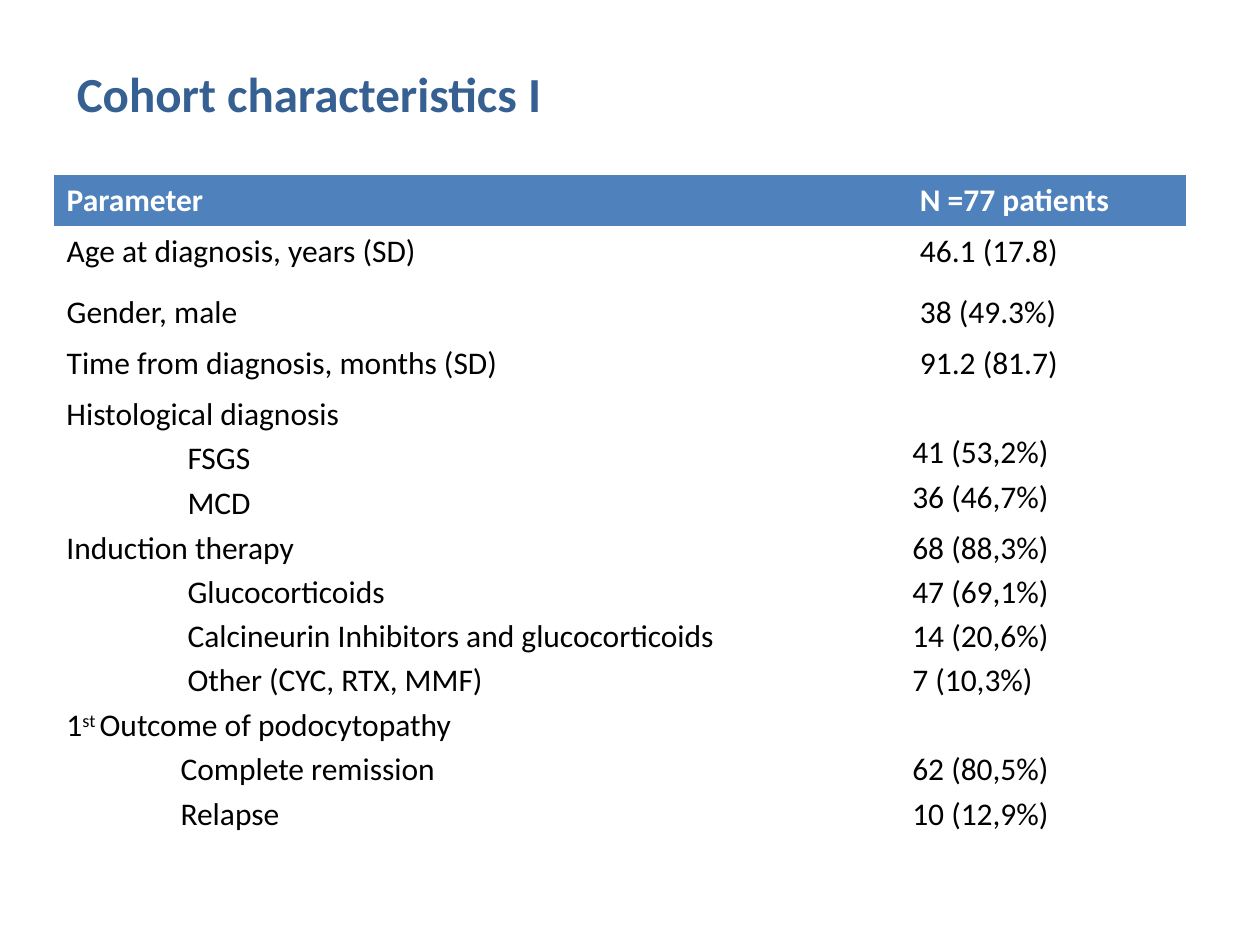
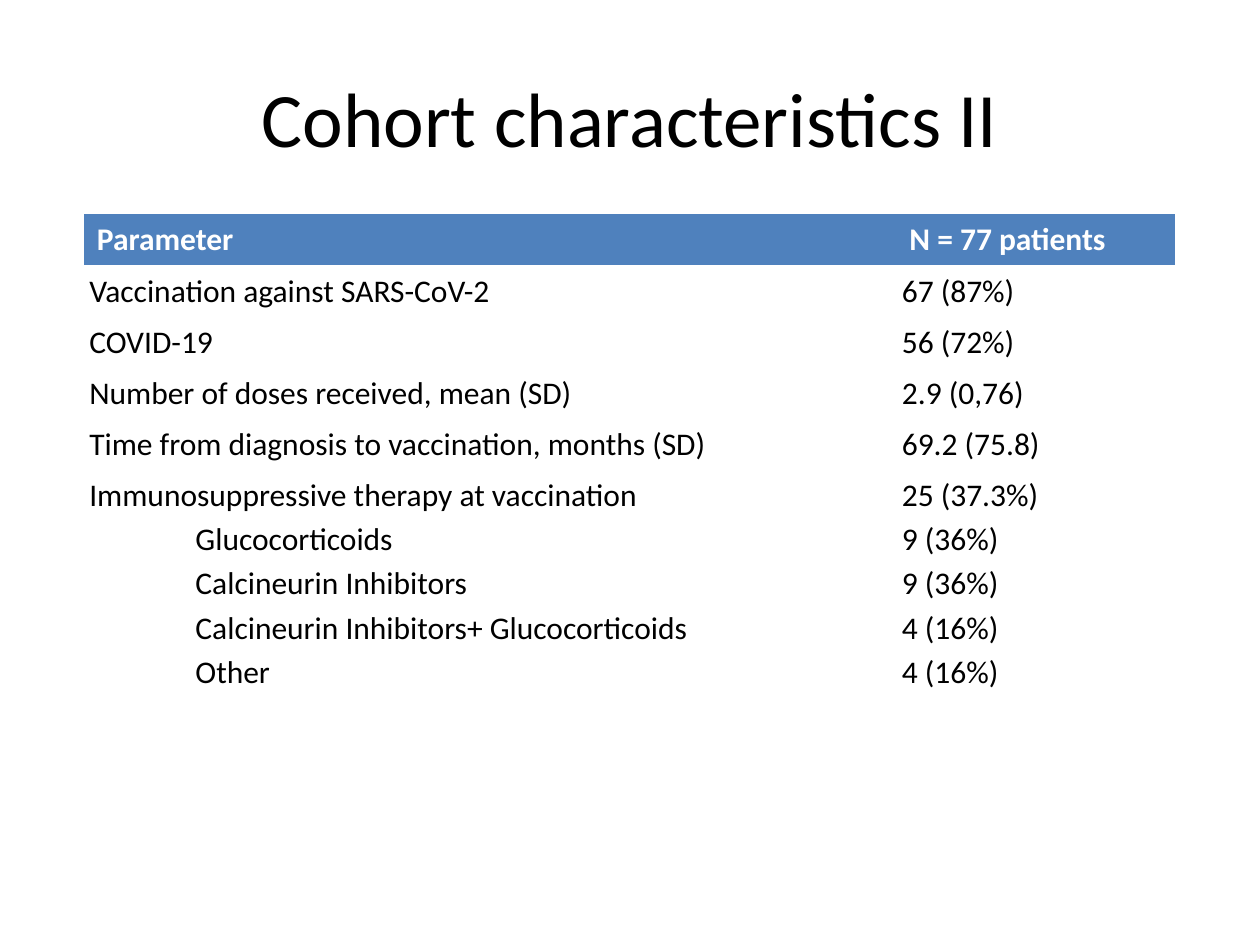
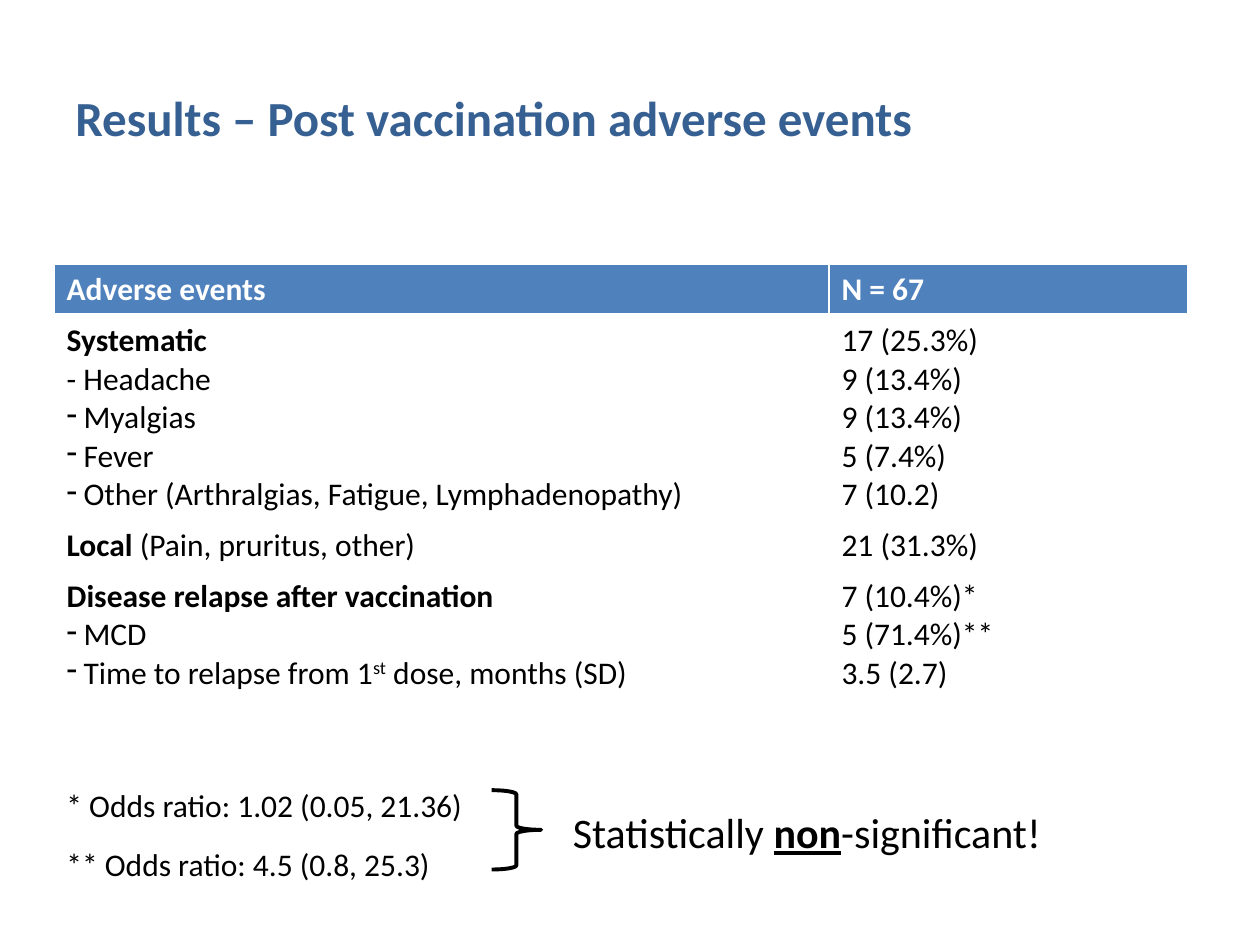
import pptx
import pptx.dml.color
import pptx.enum.shapes
import pptx.enum.text
import pptx.oxml
import pptx.oxml.ns
import pptx.util
from dataclasses import dataclass, field
from typing import Any

Cm = pptx.util.Cm
Pt = pptx.util.Pt

# Shared look
FONT = "Calibri"
BLACK, WHITE, BLUE, NAVY = "000000", "FFFFFF", "4F81BD", "376092"
PLAIN = "{2D5ABB26-0587-4C30-8999-92F81FD0307C}"  # table style without grid
WIDE, SLIM = 0.25, 0.1  # side margins of cells
ROW = 1.03
LEFT = pptx.enum.text.PP_ALIGN.LEFT
MID = pptx.enum.text.PP_ALIGN.CENTER


@dataclass
class Run:
    text: str
    bold: bool = False
    line: bool = False
    high: bool = False


@dataclass
class Line:
    runs: list[Run]
    inset: float = 0
    dash: bool = False


@dataclass
class Row:
    names: list[Any]
    vals: list[str]
    high: float = ROW
    snug: bool = False
    skip: float = 0  # space above the first value


@dataclass
class Grid:
    left: float
    top: float
    cols: tuple[float, float]
    head: tuple[str, str]
    rows: list[Row] = field(default_factory=list)
    edge: float = WIDE  # left margin of names in snug rows
    fill: str | None = WHITE
    rule: bool = False


def tint(code: str) -> pptx.dml.color.RGBColor:
    return pptx.dml.color.RGBColor.from_string(code)


def write(frame: Any, lines: list[Any], *, size: float = 18, color: str = BLACK,
          bold: bool = False, align: Any = LEFT, space: float | None = None) -> None:
    """Fill a text frame; plain strings become lines of one run."""
    frame.word_wrap = True
    for i, item in enumerate(lines):
        line = item if isinstance(item, Line) else Line([Run(item)])
        para = frame.paragraphs[0] if i == 0 else frame.add_paragraph()
        para.alignment = align
        if space:
            para.line_spacing = space
        if line.inset:
            props = para._p.get_or_add_pPr()
            props.set("marL", str(Cm(line.inset)))
            props.set("indent", str(-Cm(line.inset) if line.dash else 0))
            if line.dash:
                mark = pptx.oxml.parse_xml(
                    f'<a:buChar {pptx.oxml.ns.nsdecls("a")} char="-"/>')
                props.append(mark)
        for part in line.runs:
            run = para.add_run()
            run.text = part.text
            font = run.font
            font.name, font.size = FONT, Pt(size)
            font.bold = bold or part.bold
            font.color.rgb = tint(color)
            if part.line:
                font.underline = True
            if part.high:
                run._r.get_or_add_rPr().set("baseline", "30000")


def label(slide: Any, left: float, top: float, width: float, height: float,
          lines: list[Any], **style: Any) -> Any:
    box = slide.shapes.add_textbox(Cm(left), Cm(top), Cm(width), Cm(height))
    write(box.text_frame, lines, **style)
    return box


def title(slide: Any, text: str, left: float = 1.27, top: float = 0.76,
          height: float = 3.18, **style: Any) -> None:
    look = dict(size=28, color=NAVY, bold=True) | style
    box = label(slide, left, top, 22.86, height, [text], **look)
    box.text_frame.vertical_anchor = pptx.enum.text.MSO_ANCHOR.MIDDLE


def border(cell: Any, sides: dict[str, float]) -> None:
    """Draw white borders; sides are given in schema order."""
    props = cell._tc.get_or_add_tcPr()
    for i, (side, width) in enumerate(sides.items()):
        props.insert(i, pptx.oxml.parse_xml(
            f'<a:{side} {pptx.oxml.ns.nsdecls("a")} w="{Pt(width)}"><a:solidFill>'
            f'<a:srgbClr val="{WHITE}"/></a:solidFill></a:{side}>'))


def paint(cell: Any, color: str | None) -> None:
    if color is None:
        cell.fill.background()
    else:
        cell.fill.solid()
        cell.fill.fore_color.rgb = tint(color)


def draw(slide: Any, grid: Grid) -> None:
    highs = [ROW] + [row.high for row in grid.rows]
    frame = slide.shapes.add_table(len(highs), 2, Cm(grid.left), Cm(grid.top),
                                   Cm(sum(grid.cols)), Cm(sum(highs)))
    table = frame.table
    table.horz_banding = False
    table._tbl.tblPr.find(pptx.oxml.ns.qn("a:tableStyleId")).text = PLAIN
    for col, width in zip(table.columns, grid.cols):
        col.width = Cm(width)
    for row, high in zip(table.rows, highs):
        row.height = Cm(high)
    # Header row
    for i, text in enumerate(grid.head):
        cell = table.cell(0, i)
        write(cell.text_frame, [text], color=WHITE, bold=True)
        paint(cell, BLUE)
        if grid.rule:
            border(cell, {"lnL": 1, "lnR": 1, "lnT": 1, "lnB": 3})
    # Body rows
    for r, row in enumerate(grid.rows, 1):
        for i, lines in enumerate((row.names, row.vals)):
            cell = table.cell(r, i)
            if row.snug:
                cell.margin_left = Cm(SLIM if i else grid.edge)
                cell.margin_right = Cm(SLIM)
                cell.margin_top = Cm(0.02 + (row.skip if i else 0))
                cell.margin_bottom = 0
            write(cell.text_frame, lines, space=1.15 if row.snug else None)
            paint(cell, grid.fill)


def under(inset: float, *texts: str) -> list[Line]:
    return [Line([Run(text)], inset) for text in texts]


def dashed(*runs: Run) -> Line:
    return Line(list(runs), 0.34, True)


def strong(text: str, rest: str = "") -> Line:
    return Line([Run(text, bold=True)] + ([Run(rest)] if rest else []))


def first(slide: Any) -> None:
    title(slide, "Cohort characteristics I", left=1.3, top=0, height=3.73)
    draw(slide, Grid(1.09, 3.53, (17.2, 5.61), ("Parameter", "N =77 patients"), [
        Row(["Age at diagnosis, years (SD)"], ["46.1 (17.8)"], 1.22),
        Row(["Gender, male"], ["38 (49.3%)"]),
        Row(["Time from diagnosis, months (SD)"], ["91.2 (81.7)"]),
        Row(["Histological diagnosis", *under(2.44, "FSGS", "MCD")],
            ["41 (53,2%)", "36 (46,7%)"], 2.69, True, 0.77),
        Row(["Induction therapy",
             *under(2.44, "Glucocorticoids",
                    "Calcineurin Inhibitors and glucocorticoids",
                    "Other (CYC, RTX, MMF)")],
            ["68 (88,3%)", "47 (69,1%)", "14 (20,6%)", "7 (10,3%)"], 3.58, True),
        Row([Line([Run("1"), Run("st ", high=True), Run("Outcome of podocytopathy")]),
             *under(2.3, "Complete remission", "Relapse")],
            ["62 (80,5%)", "10 (12,9%)"], 2.69, True, 0.89),
    ], fill=None))


def second(slide: Any) -> None:
    title(slide, "Cohort characteristics II", size=44, color=BLACK, bold=False,
          align=MID)
    pairs = [("Vaccination against SARS-CoV-2", "67 (87%)"),
             ("COVID-19", "56 (72%)"),
             ("Number of doses received, mean (SD)", "2.9 (0,76)"),
             ("Time from diagnosis to vaccination, months (SD)", "69.2 (75.8)")]
    rows = [Row([name], [val], snug=True) for name, val in pairs]
    rows.append(Row(
        ["Immunosuppressive therapy at vaccination",
         *under(2.14, "Glucocorticoids", "Calcineurin Inhibitors",
                "Calcineurin Inhibitors+ Glucocorticoids", "Other")],
        ["25 (37.3%)", "9 (36%)", "9 (36%)", "4 (16%)", "4 (16%)"], 4.49, True))
    draw(slide, Grid(1.7, 4.32, (16.38, 5.61), ("Parameter", "N = 77 patients"),
                     rows, edge=SLIM))


def third(slide: Any) -> None:
    title(slide, "Results – Post vaccination adverse events")
    draw(slide, Grid(1.09, 5.33, (15.62, 7.24), ("Adverse events", "N = 67"), [
        Row([strong("Systematic"), "- Headache", dashed(Run("Myalgias")),
             dashed(Run("Fever")),
             dashed(Run("Other (Arthralgias, Fatigue, Lymphadenopathy)"))],
            ["17 (25.3%)", "9 (13.4%)", "9 (13.4%)", "5 (7.4%)", "7 (10.2)"], 4.12),
        Row([strong("Local", " (Pain, pruritus, other)")], ["21 (31.3%)"]),
        Row([strong("Disease relapse after vaccination"), dashed(Run("MCD")),
             dashed(Run("Time to relapse from 1"), Run("st", high=True),
                    Run(" dose, months (SD)"))],
            ["7 (10.4%)*", "5 (71.4%)**", "3.5 (2.7)"], 2.58),
    ], rule=True))
    # Notes and verdict
    label(slide, 1.09, 16.92, 8.2, 1.03, ["** Odds ratio: 4.5 (0.8, 25.3)"])
    label(slide, 11.3, 16.13, 12.4, 1.28,
          [Line([Run("Statistically "), Run("non", bold=True, line=True),
                 Run("-significant!")])], size=24)
    label(slide, 1.09, 15.72, 9, 1.03, ["* Odds ratio: 1.02 (0.05, 21.36)"])
    brace = slide.shapes.add_shape(pptx.enum.shapes.MSO_SHAPE.RIGHT_BRACE,
                                   Cm(9.91), Cm(15.93), Cm(1), Cm(1.6))
    brace.shadow.inherit = False
    brace.fill.background()
    brace.line.color.rgb = tint(BLACK)
    brace.line.width = Pt(2.25)


def main() -> None:
    deck = pptx.Presentation()
    deck.slide_width, deck.slide_height = Cm(25.4), Cm(19.05)
    for build in (first, second, third):
        build(deck.slides.add_slide(deck.slide_layouts[6]))
    deck.save("out.pptx")


if __name__ == "__main__":
    main()
